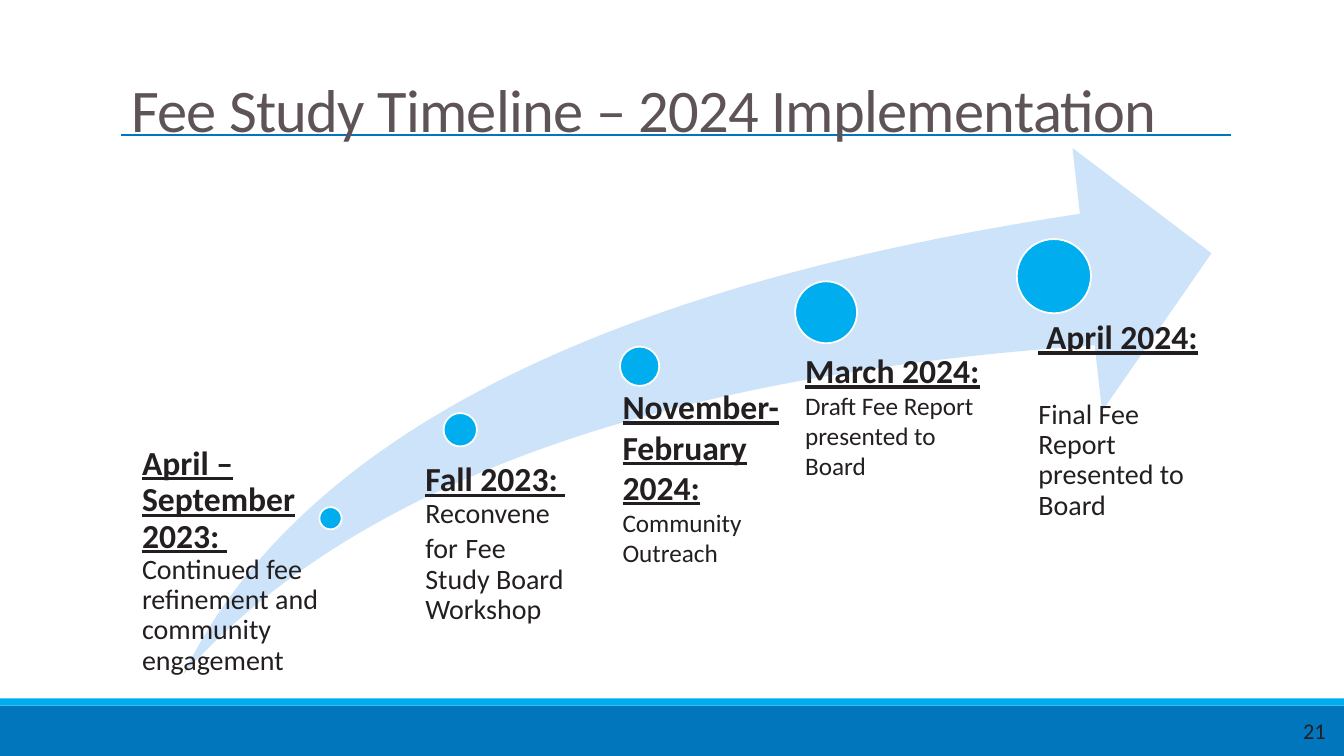
from dataclasses import dataclass

from lxml import etree
from pptx import Presentation
from pptx import util as u
from pptx.dml.color import RGBColor
from pptx.enum import shapes, text
from pptx.oxml import ns

BLUE = RGBColor(0x01, 0x76, 0xBC)
CYAN = RGBColor(0x00, 0xAE, 0xEF)
PALE = RGBColor(0xCC, 0xE3, 0xF9)
WHITE = RGBColor(0xFF, 0xFF, 0xFF)
GREY = RGBColor(0x5E, 0x53, 0x56)
INK = RGBColor(0x23, 0x1F, 0x20)
FONT = "Calibri"


@dataclass(frozen=True)
class Box:
    left: float
    top: float
    width: float
    height: float

    def lengths(self) -> tuple:
        return tuple(u.Cm(v) for v in (self.left, self.top, self.width, self.height))


@dataclass(frozen=True)
class Dot:
    x: float
    y: float
    size: float


@dataclass(frozen=True)
class Milestone:
    dot: Dot
    box: Box
    date: str
    body: tuple[tuple[str, float], ...]
    insets: tuple[float, float, float, float] = (0.25, 0.13, 0.25, 0.13)
    spacing: float = 1.0
    gap: float = 0


MILESTONES = (
    Milestone(Dot(8.33, 13.06, 0.56), Box(3.28, 11.25, 5.64, 5), "April – September 2023: ",
              (("Continued fee refinement and community engagement", 20),),
              (0.3, 0, 0, 0), 0.9),
    Milestone(Dot(11.6, 10.83, 0.84), Box(10.19, 11.66, 4.22, 5.44), "Fall 2023: ",
              (("Reconvene for", 20), (" ", 24), ("Fee Study Board Workshop", 20)),
              (0.53, 0, 0, 0), 0.9),
    Milestone(Dot(16.12, 9.23, 0.99), Box(15.44, 9.6, 4.62, 5.64), "November-February 2024:",
              (("Community Outreach", 18),)),
    Milestone(Dot(20.82, 7.87, 1.56), Box(20.04, 8.69, 4.93, 4.37), "March 2024:",
              (("Draft Fee Report presented to Board", 18),)),
    Milestone(Dot(26.56, 6.96, 1.87), Box(25.43, 8.08, 5.26, 4.9), " April 2024:",
              (("Final Fee Report presented to Board", 20),),
              (0.74, 0, 0, 0), 0.9, 31),
)


def add_run(p, words: str, size: float, color: RGBColor = INK, heading: bool = False):
    r = p.add_run()
    r.text = words
    r.font.name = FONT
    r.font.size = u.Pt(size)
    r.font.color.rgb = color
    r.font.bold = heading
    r.font.underline = heading
    return r


def add_filled(s, kind, box: Box, fill: RGBColor):
    sp = s.shapes.add_shape(kind, *box.lengths())
    sp.shadow.inherit = False
    sp.fill.solid()
    sp.fill.fore_color.rgb = fill
    sp.line.fill.background()
    return sp


def add_dot(s, dot: Dot) -> None:
    half = dot.size / 2
    box = Box(dot.x - half, dot.y - half, dot.size, dot.size)
    sp = add_filled(s, shapes.MSO_SHAPE.OVAL, box, CYAN)
    sp.line.color.rgb = WHITE
    sp.line.width = u.Pt(1.25)


def add_label(s, m: Milestone) -> None:
    tf = s.shapes.add_textbox(*m.box.lengths()).text_frame
    tf.word_wrap = True
    tf.margin_left, tf.margin_top, tf.margin_right, tf.margin_bottom = (
        u.Cm(v) for v in m.insets)
    date, body = tf.paragraphs[0], tf.add_paragraph()
    date.line_spacing = body.line_spacing = m.spacing
    date.space_after = u.Pt(m.gap)
    add_run(date, m.date, 24, heading=True)
    for words, size in m.body:
        add_run(body, words, size)


def add_title(s) -> None:
    line = s.shapes.add_connector(shapes.MSO_CONNECTOR.STRAIGHT,
                                  u.Cm(3.05), u.Cm(3.4), u.Cm(31.01), u.Cm(3.4))
    line.line.color.rgb = BLUE
    line.line.width = u.Pt(1)
    etree.SubElement(line._element.spPr, ns.qn("a:effectLst"))
    title = s.shapes.title
    title.left, title.top, title.width, title.height = Box(3.05, 0.79, 27.94, 3).lengths()
    line._element.addnext(title._element)
    tf = title.text_frame
    tf.auto_size = text.MSO_AUTO_SIZE.NONE
    tf.vertical_anchor = text.MSO_ANCHOR.BOTTOM
    p = tf.paragraphs[0]
    p.alignment = text.PP_ALIGN.LEFT
    p.line_spacing = 0.85
    r = add_run(p, "Fee Study Timeline – 2024 Implementation", 43.2, GREY)
    r.font._element.set("spc", "-50")


def add_page_number(s) -> None:
    tf = s.shapes.add_textbox(*Box(26.04, 17.91, 7.62, 1.02).lengths()).text_frame
    tf.word_wrap = True
    tf.vertical_anchor = text.MSO_ANCHOR.MIDDLE
    p = tf.paragraphs[0]
    p.alignment = text.PP_ALIGN.RIGHT
    add_run(p, "21", 16)


def main() -> None:
    prs = Presentation()
    prs.slide_width, prs.slide_height = u.Cm(33.87), u.Cm(19.05)
    s = prs.slides.add_slide(prs.slide_layouts[5])
    add_filled(s, shapes.MSO_SHAPE.RECTANGLE, Box(0, 17.78, 33.87, 1.27), BLUE)
    add_filled(s, shapes.MSO_SHAPE.RECTANGLE, Box(0, 17.6, 33.87, 0.18), CYAN)
    add_title(s)
    add_page_number(s)
    arrow = add_filled(s, shapes.MSO_SHAPE.SWOOSH_ARROW, Box(4.62, 3.73, 25.91, 13.26), PALE)
    arrow.adjustments[0] = arrow.adjustments[1] = 0.25
    for m in MILESTONES:
        add_dot(s, m.dot)
        add_label(s, m)
    prs.save("out.pptx")


if __name__ == "__main__":
    main()
